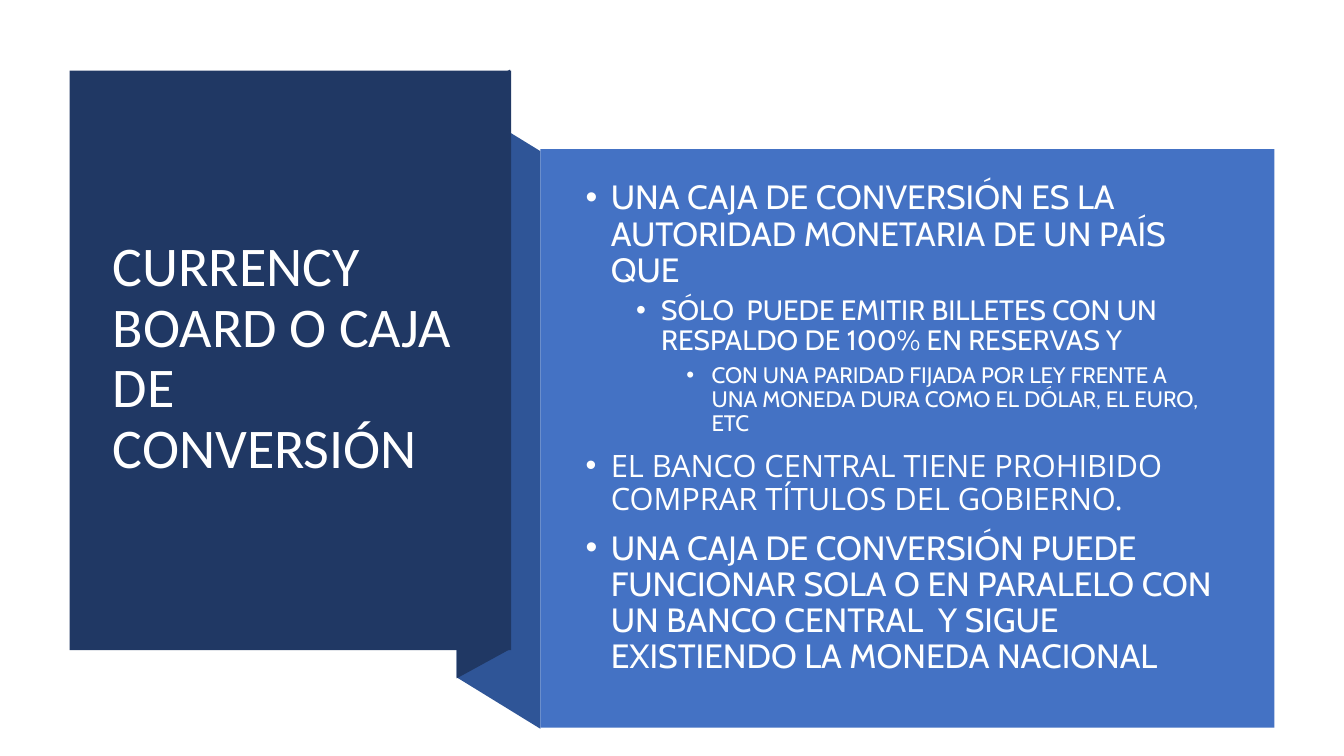
from lxml.etree import SubElement
from pptx import Presentation
from pptx.dml.color import RGBColor
from pptx.enum.shapes import MSO_SHAPE as Preset
from pptx.enum.text import MSO_ANCHOR as Anchor
from pptx.oxml.ns import qn
from pptx.util import Inches, Pt

NAVY = RGBColor(0x20, 0x38, 0x64)
MID_BLUE = RGBColor(0x2F, 0x55, 0x97)
BLUE = RGBColor(0x44, 0x72, 0xC4)
WHITE = RGBColor(0xFF, 0xFF, 0xFF)
OFF_WHITE = RGBColor(0xFE, 0xFF, 0xFF)

TITLE = "CURRENCY BOARD O CAJA DE CONVERSIÓN"
POINTS = [
    (0, 24, "Cabin", OFF_WHITE,
     "UNA CAJA DE CONVERSIÓN ES LA AUTORIDAD MONETARIA DE UN PAÍS QUE"),
    (1, 20, "Cabin", OFF_WHITE,
     "SÓLO  PUEDE EMITIR BILLETES CON UN RESPALDO DE 100% EN RESERVAS Y"),
    (2, 16, "Cabin", OFF_WHITE,
     "CON UNA PARIDAD FIJADA POR LEY FRENTE A  UNA MONEDA DURA COMO EL DÓLAR, EL EURO, ETC"),
    (0, 22, "Open Sans", WHITE,
     "EL BANCO CENTRAL TIENE PROHIBIDO COMPRAR TÍTULOS DEL GOBIERNO."),
    (0, 24, "Cabin", OFF_WHITE,
     "UNA CAJA DE CONVERSIÓN PUEDE FUNCIONAR SOLA O EN PARALELO CON UN BANCO CENTRAL  "
     "Y SIGUE EXISTIENDO LA MONEDA NACIONAL"),
]


class SlideBuilder:
    line_spacing = 0.9
    indent = 0.25
    level_step = 0.5

    def __init__(self, slide):
        self.slide = slide

    def paint(self, shape, color):
        shape.shadow.inherit = False
        shape.fill.solid()
        shape.fill.fore_color.rgb = color
        shape.line.fill.background()

    def panel(self, left, top, width, height, color):
        shape = self.slide.shapes.add_shape(
            Preset.RECTANGLE, Inches(left), Inches(top), Inches(width), Inches(height))
        self.paint(shape, color)

    def fold(self, corners, color):
        points = [(Inches(x), Inches(y)) for x, y in corners]
        builder = self.slide.shapes.build_freeform(*points[0])
        builder.add_line_segments(points[1:], close=True)
        self.paint(builder.convert_to_shape(), color)

    def text_box(self, left, top, width, height):
        frame = self.slide.shapes.add_textbox(
            Inches(left), Inches(top), Inches(width), Inches(height)).text_frame
        for name, value in {"word_wrap": True, "vertical_anchor": Anchor.MIDDLE}.items():
            setattr(frame, name, value)
        return frame

    def add_text(self, paragraph, text, size, font, color):
        paragraph.line_spacing = self.line_spacing
        run = paragraph.add_run()
        run.text = text
        for name, value in {"size": Pt(size), "name": font}.items():
            setattr(run.font, name, value)
        run.font.color.rgb = color

    def title(self, frame, text):
        self.add_text(frame.paragraphs[0], text, 40, "Calibri", WHITE)

    def bullets(self, frame, points):
        for index, (level, size, font, color, text) in enumerate(points):
            paragraph = frame.add_paragraph() if index else frame.paragraphs[0]
            paragraph.level = level
            paragraph.space_before = Pt(5 if level else 10)
            self.add_text(paragraph, text, size, font, color)
            properties = paragraph._p.get_or_add_pPr()
            margin = self.indent + level * self.level_step
            properties.set("marL", str(Inches(margin)))
            properties.set("indent", str(-Inches(self.indent)))
            SubElement(properties, qn("a:buFont")).set("typeface", "Arial")
            SubElement(properties, qn("a:buChar")).set("char", "•")


def main():
    presentation = Presentation()
    presentation.slide_width = Inches(13.33)
    presentation.slide_height = Inches(7.5)
    slide = presentation.slides.add_slide(presentation.slide_layouts[6])
    builder = SlideBuilder(slide)

    builder.fold([(5.36, 7.23), (4.53, 6.72), (4.53, 0.99), (5.36, 1.5)], MID_BLUE)
    builder.fold([(5.06, 6.44), (4.53, 6.73), (4.53, 0.98), (5.06, 0.69)], NAVY)
    builder.panel(0.69, 0.7, 4.38, 5.75, NAVY)
    builder.title(builder.text_box(1.02, 1.07, 3.71, 4.99), TITLE)
    builder.panel(5.36, 1.48, 7.28, 5.74, BLUE)
    builder.bullets(builder.text_box(5.71, 1.88, 6.51, 4.74), POINTS)

    presentation.save("out.pptx")


if __name__ == "__main__":
    main()
